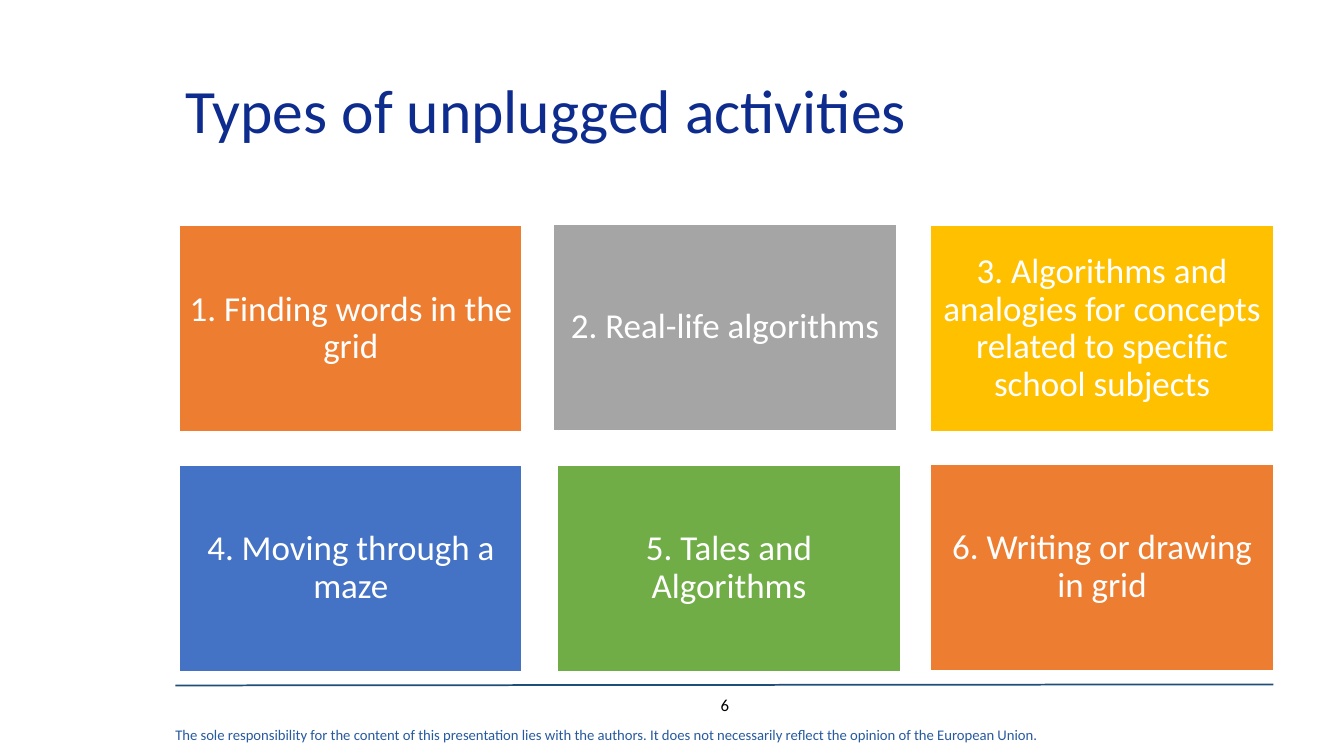
"""Build the slide on types of unplugged activities."""
import pptx
import pptx.dml.color
import pptx.enum.shapes
import pptx.enum.text
import pptx.oxml
import pptx.util

Inches = pptx.util.Inches
Pt = pptx.util.Pt
RGBColor = pptx.dml.color.RGBColor
PP_ALIGN = pptx.enum.text.PP_ALIGN

WHITE = RGBColor(0xFF, 0xFF, 0xFF)
BLACK = RGBColor(0x00, 0x00, 0x00)
NAVY = RGBColor(0x0E, 0x2C, 0x8E)
RULE_BLUE = RGBColor(0x1F, 0x4E, 0x79)
NOTICE_BLUE = RGBColor(0x27, 0x5A, 0x9F)
ORANGE = RGBColor(0xED, 0x7D, 0x31)
GRAY = RGBColor(0xA5, 0xA5, 0xA5)
GOLD = RGBColor(0xFF, 0xC0, 0x00)
BLUE = RGBColor(0x44, 0x72, 0xC4)
GREEN = RGBColor(0x70, 0xAD, 0x47)

CARD_WIDTH, CARD_HEIGHT = 3.4, 2.04
ACTIVITIES = [
    ("1. Finding words in the grid", ORANGE, 1.78, 2.24),
    ("2. Real-life algorithms", GRAY, 5.49, 2.23),
    ("3. Algorithms and analogies for concepts related to specific school subjects", GOLD, 9.23, 2.24),
    ("4. Moving through a maze", BLUE, 1.78, 4.62),
    ("5. Tales and Algorithms", GREEN, 5.53, 4.62),
    ("6. Writing or drawing in grid", ORANGE, 9.23, 4.61),
]
NOTICE = (
    "The sole responsibility for the content of this presentation lies with the authors. "
    "It does not necessarily reflect the opinion of the European Union."
)


def write_text(shape, text, size, color, alignment=PP_ALIGN.LEFT, line_spacing=1.0):
    """Fill a shape with one vertically centred, formatted paragraph."""
    frame = shape.text_frame
    frame.text = text
    frame.word_wrap = True
    frame.vertical_anchor = pptx.enum.text.MSO_ANCHOR.MIDDLE
    paragraph = frame.paragraphs[0]
    paragraph.alignment = alignment
    paragraph.line_spacing = line_spacing
    paragraph.font.name = "Calibri"
    paragraph.font.size = Pt(size)
    paragraph.font.color.rgb = color


def add_title(slide, text):
    """Place and format the title placeholder."""
    title = slide.shapes.title
    title.left, title.top = Inches(1.74), Inches(0.4)
    title.width, title.height = Inches(9.66), Inches(1.45)
    write_text(title, text, 44, NAVY, line_spacing=0.9)


def add_card(slide, text, fill, left, top):
    """Add one coloured activity card."""
    card = slide.shapes.add_shape(
        pptx.enum.shapes.MSO_SHAPE.RECTANGLE,
        Inches(left), Inches(top), Inches(CARD_WIDTH), Inches(CARD_HEIGHT),
    )
    card.shadow.inherit = False
    card.fill.solid()
    card.fill.fore_color.rgb = fill
    card.line.color.rgb = WHITE
    card.line.width = Pt(1)
    frame = card.text_frame
    frame.margin_left = frame.margin_right = Inches(0.1)
    frame.margin_top = frame.margin_bottom = Inches(0.1)
    write_text(card, text, 25, WHITE, PP_ALIGN.CENTER, 0.9)


def add_label(slide, text, left, top, width, height, size, color, alignment=PP_ALIGN.LEFT):
    """Add a plain text box."""
    box = slide.shapes.add_textbox(Inches(left), Inches(top), Inches(width), Inches(height))
    write_text(box, text, size, color, alignment)


def add_footer_rule(slide):
    """Draw the thin line above the footer."""
    rule = slide.shapes.add_connector(
        pptx.enum.shapes.MSO_CONNECTOR.STRAIGHT,
        Inches(1.74), Inches(6.8), Inches(12.63), Inches(6.79),
    )
    rule.line.color.rgb = RULE_BLUE
    rule.line.width = Pt(1.25)
    properties = rule.element.spPr
    properties.append(properties.makeelement(pptx.oxml.ns.qn("a:effectLst"), {}))


def main():
    """Build and save the presentation."""
    presentation = pptx.Presentation()
    presentation.slide_width = Inches(13.33)
    presentation.slide_height = Inches(7.5)
    slide = presentation.slides.add_slide(presentation.slide_layouts.get_by_name("Title Only"))
    add_footer_rule(slide)
    add_title(slide, "Types of unplugged activities")
    for activity in ACTIVITIES:
        add_card(slide, *activity)
    add_label(slide, NOTICE, 1.64, 7.16, 8.97, 0.26, 10.5, NOTICE_BLUE)
    add_label(slide, "6", 6.89, 6.79, 0.6, 0.4, 12, BLACK, PP_ALIGN.CENTER)
    presentation.save("out.pptx")


if __name__ == "__main__":
    main()
